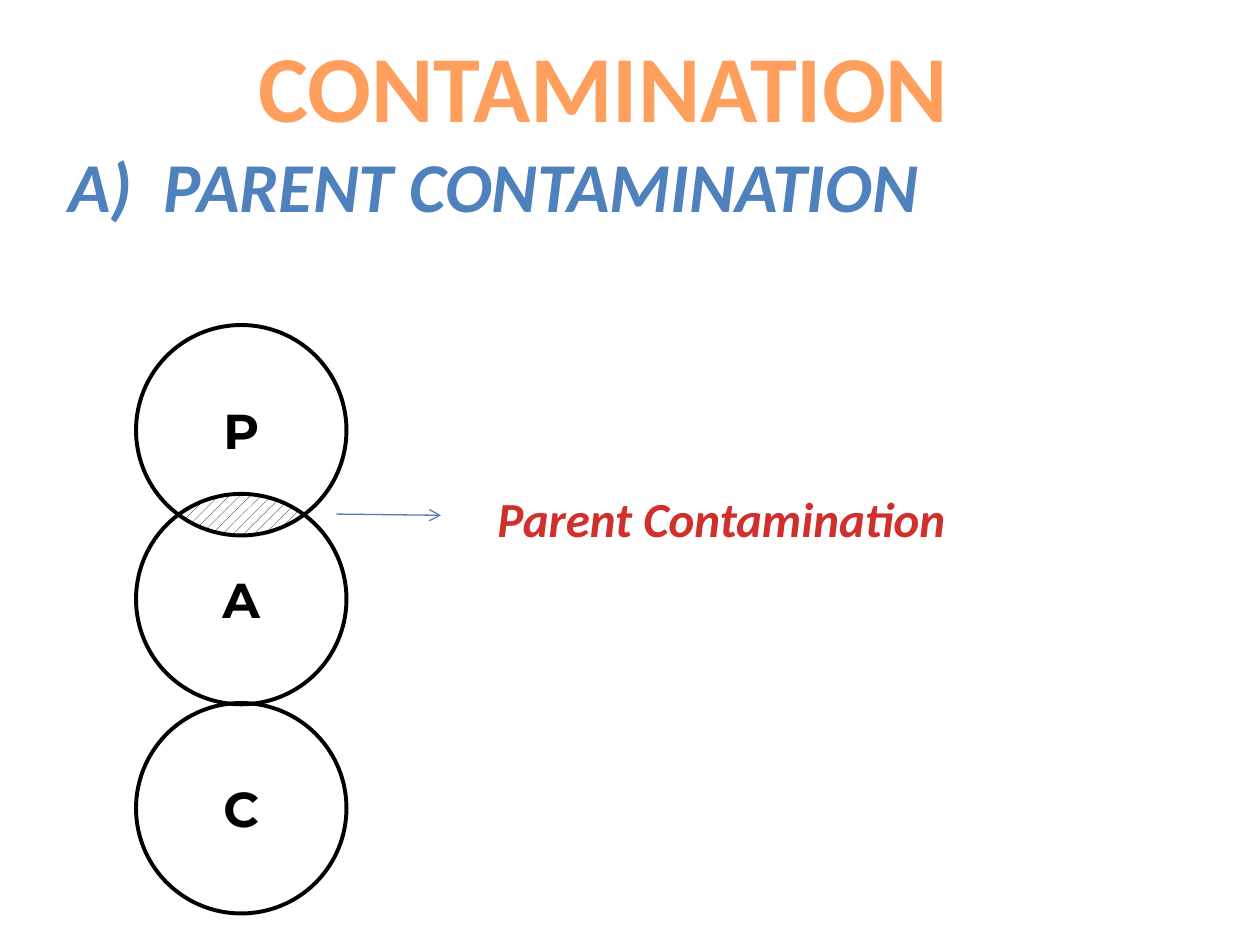
import math

import pptx
import pptx.dml.color
import pptx.enum.dml
import pptx.enum.shapes
import pptx.enum.text
import pptx.oxml
import pptx.oxml.ns
import pptx.util

Inches, Pt = pptx.util.Inches, pptx.util.Pt
SHAPES = pptx.enum.shapes.MSO_SHAPE
ANCHOR = pptx.enum.text.MSO_ANCHOR
AUTO_SIZE = pptx.enum.text.MSO_AUTO_SIZE

TITLE = ("CONTAMINATION", (1.92, 0.17, 5.74, 1.01), 54, "FF9F5D", False)
SUBTITLE = ("A)  PARENT CONTAMINATION", (0, 1.08, 7.83, 0.77), 40, "4F81BD", True)
OVERLAP_LABEL = ("Parent Contamination", (3.83, 3.83, 3.79, 0.57), 28, "D02F2C", True)

# Ego states from top to bottom: letter and top of its circle
EGO_STATES = [("P", 2.58), ("A", 3.92), ("C", 5.58)]
CIRCLE_LEFT, DIAMETER = 1.08, 1.67
ARROW = (2.67, 4.08, 3.5, 4.09)


def rgb(colour):
    return pptx.dml.color.RGBColor.from_string(colour)


def format_text(shape, words, size, colour, italic=False, font="Calibri"):
    frame = shape.text_frame
    frame.text = words
    paragraph = frame.paragraphs[0]
    paragraph.alignment = pptx.enum.text.PP_ALIGN.CENTER
    letters = paragraph.runs[0].font
    letters.name, letters.size = font, Pt(size)
    letters.bold, letters.italic = True, italic
    letters.color.rgb = rgb(colour)
    return frame


def place_heading(shape, heading):
    words, box, size, colour, italic = heading
    shape.left, shape.top, shape.width, shape.height = map(Inches, box)
    frame = format_text(shape, words, size, colour, italic)
    frame.vertical_anchor = ANCHOR.TOP
    frame.auto_size = AUTO_SIZE.SHAPE_TO_FIT_TEXT
    frame.word_wrap = True


def add_overlap(slide, upper_top, lower_top, steps=14):
    """Hatch the lens that the two circles share."""
    radius = DIAMETER / 2
    centre_x = CIRCLE_LEFT + radius
    middle_y = (upper_top + lower_top) / 2 + radius
    offset = (lower_top - upper_top) / 2
    half_angle = math.acos(offset / radius)
    angles = [half_angle * (2 * i / steps - 1) for i in range(steps + 1)]
    arc = [(radius * math.sin(a), radius * math.cos(a) - offset) for a in angles]
    outline = arc + [(-x, -y) for x, y in arc[1:-1]]
    points = [(Inches(centre_x + x), Inches(middle_y + y)) for x, y in outline]
    builder = slide.shapes.build_freeform(*points[0])
    builder.add_line_segments(points[1:], close=True)
    lens = builder.convert_to_shape()
    lens.shadow.inherit = False
    lens.fill.patterned()
    lens.fill.pattern = pptx.enum.dml.MSO_PATTERN.PERCENT_20
    lens.fill.fore_color.rgb = rgb("000000")
    lens.fill.back_color.rgb = rgb("FFFFFF")
    lens.line.fill.background()


def add_ego_state(slide, letter, top):
    box = map(Inches, (CIRCLE_LEFT, top, DIAMETER, DIAMETER))
    circle = slide.shapes.add_shape(SHAPES.OVAL, *box)
    circle.shadow.inherit = False
    circle.fill.background()
    circle.line.color.rgb = rgb("000000")
    circle.line.width = Pt(2.25)
    frame = format_text(circle, letter, 28, "000000", font="Montserrat")
    frame.vertical_anchor = ANCHOR.MIDDLE
    frame.word_wrap = False
    frame.paragraphs[0].space_before = Pt(5.6)


def add_arrow(slide):
    arrow = slide.shapes.add_connector(
        pptx.enum.shapes.MSO_CONNECTOR.STRAIGHT, *map(Inches, ARROW))
    arrow.line.color.rgb = rgb("4B7EBC")
    arrow.line.width = Pt(0.75)
    head = pptx.oxml.parse_xml(
        f'<a:tailEnd {pptx.oxml.ns.nsdecls("a")} type="arrow"/>')
    arrow.line._get_or_add_ln().append(head)
    arrow._element.spPr.append(
        pptx.oxml.parse_xml(f'<a:effectLst {pptx.oxml.ns.nsdecls("a")}/>'))


def main():
    deck = pptx.Presentation()
    deck.slide_width, deck.slide_height = Inches(10), Inches(7.5)
    slide = deck.slides.add_slide(deck.slide_layouts.get_by_name("Title Only"))
    place_heading(slide.shapes.title, TITLE)
    add_arrow(slide)
    add_overlap(slide, EGO_STATES[0][1], EGO_STATES[1][1])
    for letter, top in EGO_STATES:
        add_ego_state(slide, letter, top)
    for heading in (OVERLAP_LABEL, SUBTITLE):
        place_heading(slide.shapes.add_textbox(0, 0, 0, 0), heading)
    deck.save("out.pptx")


if __name__ == "__main__":
    main()
